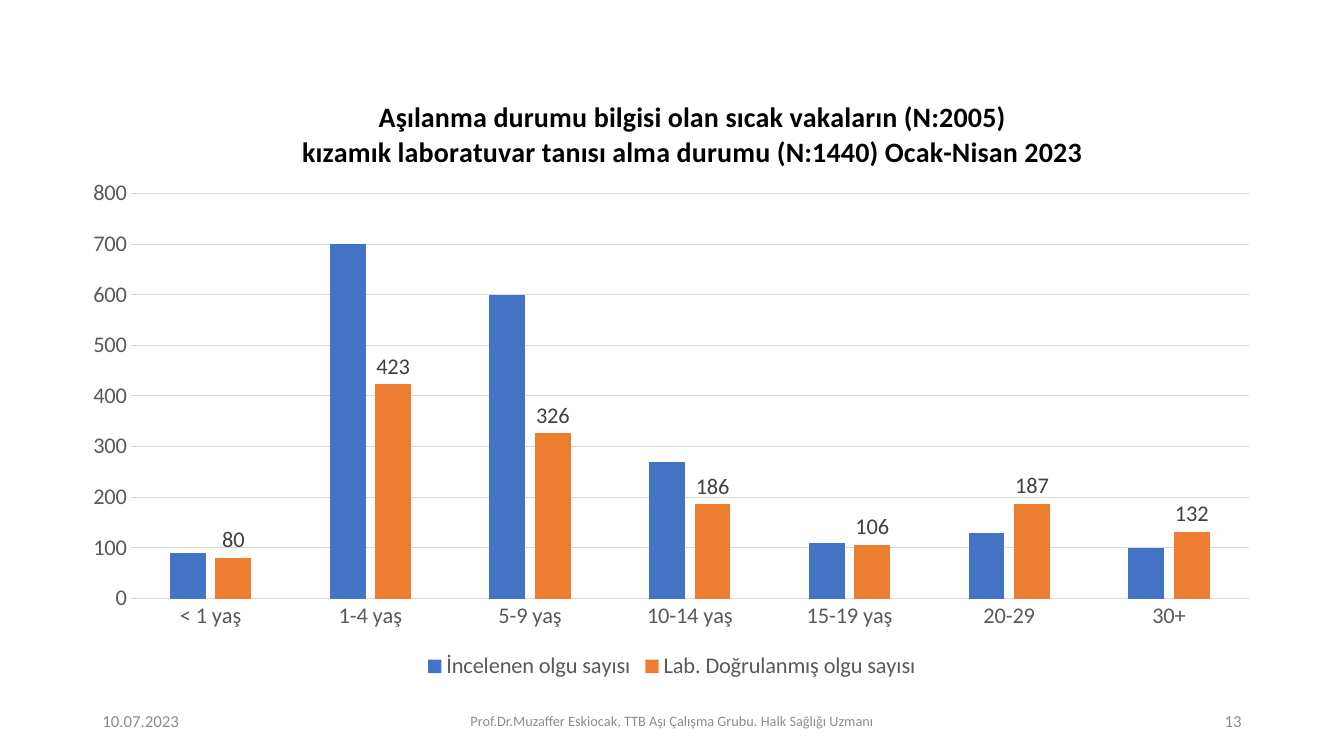
from pptx import Presentation
from pptx.chart.data import CategoryChartData
from pptx.dml.color import RGBColor
from pptx.enum.chart import XL_CHART_TYPE, XL_LABEL_POSITION, XL_LEGEND_POSITION, XL_TICK_MARK
from pptx.enum.text import MSO_ANCHOR, PP_ALIGN
from pptx.oxml import parse_xml
from pptx.oxml.ns import nsdecls, qn
from pptx.util import Cm, Pt

AGES = ["< 1 yaş", "1-4 yaş", "5-9 yaş", "10-14 yaş", "15-19 yaş", "20-29", "30+"]
CASES = [
    ("İncelenen olgu sayısı", [90, 700, 600, 270, 110, 130, 100], "4472C4"),
    ("Lab. Doğrulanmış olgu sayısı", [80, 423, 326, 186, 106, 187, 132], "ED7D31"),
]
HEADING = [
    "Aşılanma durumu bilgisi olan sıcak vakaların (N:2005)",
    "kızamık laboratuvar tanısı alma durumu (N:1440) Ocak-Nisan 2023",
]
FOOTER = [
    ("10.07.2023", 0, 7.62, PP_ALIGN.LEFT, 12),
    ("Prof.Dr.Muzaffer Eskiocak, TTB Aşı Çalışma Grubu. Halk Sağlığı Uzmanı",
     8.89, 11.43, PP_ALIGN.CENTER, 10.2),
    ("13", 21.59, 7.62, PP_ALIGN.RIGHT, 12),
]


def colour(value):
    """Turn a hex string into a colour."""
    return RGBColor.from_string(value)


def style(font, size, value, bold=False):
    """Set the face, size, colour and weight of a font."""
    font.name = "Calibri"
    font.size = Pt(size)
    font.color.rgb = colour(value)
    font.bold = bold


def set_layout(parent, index, target="", **fractions):
    """Fix a chart part at the given fractions of the chart area."""
    for automatic in parent.findall(qn("c:layout")):
        parent.remove(automatic)
    inner = f'<c:layoutTarget val="{target}"/>' if target else ""
    modes = '<c:xMode val="edge"/><c:yMode val="edge"/>'
    places = "".join(f'<c:{key} val="{part}"/>' for key, part in fractions.items())
    parent.insert(index, parse_xml(
        f'<c:layout {nsdecls("c")}><c:manualLayout>{inner}{modes}{places}'
        "</c:manualLayout></c:layout>"))


def style_heading(chart):
    """Write the two centred lines above the columns."""
    title = chart.chart_title
    frame = title.text_frame
    frame.text = "\n".join(HEADING)
    for line in frame.paragraphs:
        line.alignment = PP_ALIGN.CENTER
        style(line.runs[0].font, 20, "000000", True)
    title.include_in_layout = False
    set_layout(title._element, 1, x=0.19, y=0.04)


def style_axes(chart):
    """Format both axes and the gridlines."""
    ages, counts = chart.category_axis, chart.value_axis
    for axis in (ages, counts):
        axis.major_tick_mark = axis.minor_tick_mark = XL_TICK_MARK.NONE
        style(axis.tick_labels.font, 16, "595959")
    counts.minimum_scale, counts.maximum_scale, counts.major_unit = 0, 800, 100
    counts.format.line.fill.background()
    for line in (ages.format.line, counts.major_gridlines.format.line):
        line.color.rgb = colour("D9D9D9")
        line.width = Pt(0.75)


def style_columns(chart):
    """Colour the columns and label the confirmed cases."""
    plot = chart.plots[0]
    plot.gap_width, plot.overlap, plot.vary_by_categories = 219, -27, False
    for series, (_, _, fill) in zip(plot.series, CASES):
        series.format.fill.solid()
        series.format.fill.fore_color.rgb = colour(fill)
        series.invert_if_negative = False
    labels = plot.series[1].data_labels
    labels.show_value = True
    labels.position = XL_LABEL_POSITION.OUTSIDE_END
    style(labels.font, 16, "404040")


def add_case_chart(slide, left, top, width, height):
    """Draw the column chart of cases by age in the given box."""
    data = CategoryChartData()
    data.categories = AGES
    for name, counts, _ in CASES:
        data.add_series(name, counts)
    chart = slide.shapes.add_chart(
        XL_CHART_TYPE.COLUMN_CLUSTERED, left, top, width, height, data).chart
    style(chart.font, 16, "000000")
    style_heading(chart)
    style_axes(chart)
    style_columns(chart)
    chart.has_legend = True
    chart.legend.position = XL_LEGEND_POSITION.BOTTOM
    chart.legend.include_in_layout = False
    style(chart.legend.font, 16, "595959")
    plot_area = chart._chartSpace.chart.plotArea
    set_layout(plot_area, 0, "inner", x=0.05, y=0.2, w=0.93, h=0.66)


def add_footer(slide, left, top, height):
    """Place the date, author and page number in one row."""
    for text, offset, width, alignment, size in FOOTER:
        frame = slide.shapes.add_textbox(left + Cm(offset), top, Cm(width), height).text_frame
        frame.word_wrap = True
        frame.vertical_anchor = MSO_ANCHOR.MIDDLE
        frame.text = text
        paragraph = frame.paragraphs[0]
        paragraph.alignment = alignment
        paragraph.space_after = Pt(6)
        style(paragraph.runs[0].font, size, "8C8C8C")


def main():
    """Build and save the slide."""
    deck = Presentation()
    deck.slide_width, deck.slide_height = Cm(33.87), Cm(19.05)
    slide = deck.slides.add_slide(deck.slide_layouts[6])
    add_footer(slide, Cm(2.33), Cm(17.65), Cm(1.02))
    add_case_chart(slide, Cm(1.78), Cm(1.78), Cm(30.3), Cm(15.47))
    deck.save("out.pptx")


if __name__ == "__main__":
    main()
